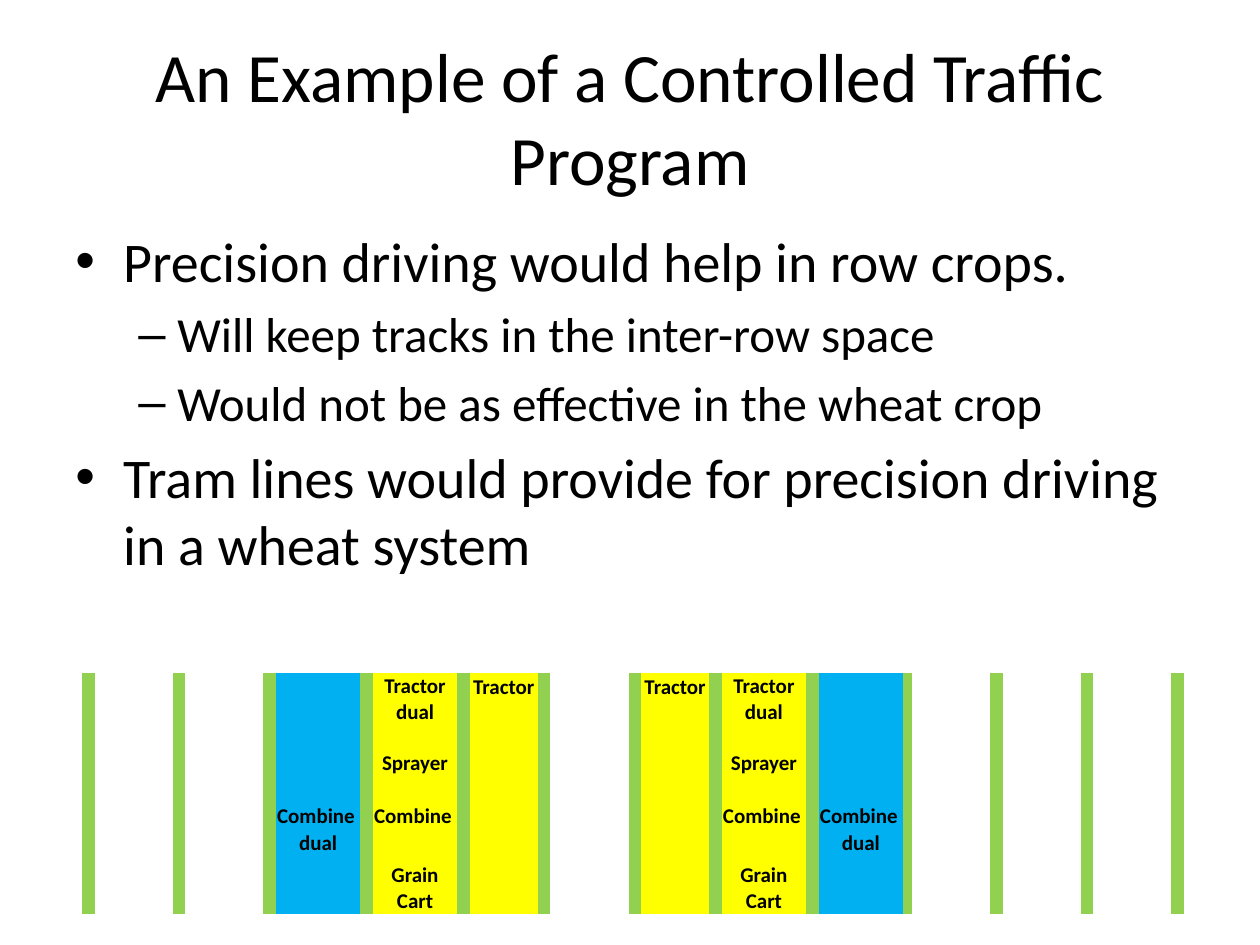
import pptx
import pptx.util
import pptx.dml.color
import pptx.enum.text
import pptx.oxml.ns
import lxml.etree

RGBColor = pptx.dml.color.RGBColor
Align = pptx.enum.text.PP_ALIGN
Anchor = pptx.enum.text.MSO_ANCHOR
Inches = pptx.util.Inches
qn = pptx.oxml.ns.qn

BLACK = RGBColor(0x00, 0x00, 0x00)
TRACK_GREEN = RGBColor(0x92, 0xD0, 0x50)
COMBINE_BLUE = RGBColor(0x00, 0xB0, 0xF0)
LANE_YELLOW = RGBColor(0xFF, 0xFF, 0x00)

FONT = "Calibri"
PLAIN_TABLE_STYLE = "{2D5ABB26-0587-4C30-8999-92F81FD0307C}"
WIDTH, HEIGHT = 10, 7.5
MARGIN = WIDTH * 0.05

BULLETS = [
    (0, "Precision driving would help in row crops."),
    (1, "Will keep tracks in the inter-row space"),
    (1, "Would not be as effective in the wheat crop"),
    (0, "Tram lines would provide for precision driving in a wheat system"),
]
# bullet sign, text size, left indent, hanging indent for each level
LEVELS = [("•", 32, 0.38, 0.38), ("–", 28, 0.81, 0.31)]

TRACK = 0.1
NARROW_TRACK_COLUMN, NARROW_TRACK = 19, 0.07
LANES = [0.28, 0.62, 0.62, 0.67, 0.67, 0.54, 0.62,
         0.54, 0.67, 0.67, 0.62, 0.62, 0.62, 0.28]
ROWS = [0.81, 0.43, 0.67]
# lane numbers on both sides of the centre lane
COMBINE_LANES, SHARED_LANES, TRACTOR_LANES = (3, 9), (4, 8), (5, 7)


def add_text(frame, text, size=12, bold=False, align=Align.LEFT, before=0, bullet=None):
    """Add a paragraph; bullet is (sign, left indent, hanging indent)."""
    para = frame.paragraphs[0]
    if para.runs:
        para = frame.add_paragraph()
    if bullet:
        sign, left, hanging = bullet
        props = para._p.get_or_add_pPr()
        props.set("marL", str(Inches(left)))
        props.set("indent", str(-Inches(hanging)))
        lxml.etree.SubElement(props, qn("a:buFont")).set("typeface", "Arial")
        lxml.etree.SubElement(props, qn("a:buChar")).set("char", sign)
    para.alignment = align
    if before:
        para.space_before = pptx.util.Pt(before)
    span = para.add_run()
    span.text = text
    span.font.name = FONT
    span.font.size = pptx.util.Pt(size)
    span.font.bold = bold
    span.font.color.rgb = BLACK


def add_box(page, left, top, width, height, anchor=Anchor.TOP):
    box = page.shapes.add_textbox(*map(Inches, (left, top, width, height)))
    box.text_frame.word_wrap = True
    box.text_frame.vertical_anchor = anchor
    return box.text_frame


def add_title(page, *area):
    frame = add_box(page, *area, anchor=Anchor.MIDDLE)
    add_text(frame, "An Example of a Controlled Traffic Program",
             size=39.6, align=Align.CENTER)


def add_bullets(page, *area):
    frame = add_box(page, *area)
    for number, (level, text) in enumerate(BULLETS):
        sign, size, left, hanging = LEVELS[level]
        add_text(frame, text, size=size, before=0.2 * size if number else 0,
                 bullet=(sign, left, hanging))


def cell_color(row, column):
    lane = column // 2
    if column % 2:
        # the centre lane lies between two tracks, like every other lane
        return TRACK_GREEN
    if lane in COMBINE_LANES:
        return COMBINE_BLUE
    if lane in SHARED_LANES + TRACTOR_LANES:
        return LANE_YELLOW
    return None


def fill_label(table, row, lane, *lines, align=Align.CENTER, anchor=Anchor.BOTTOM, gap=0):
    cell = table.cell(row, 2 * lane)
    cell.vertical_anchor = anchor
    for number, line in enumerate(lines):
        add_text(cell.text_frame, line, bold=True, align=align,
                 before=gap if number else 0)


def add_traffic_table(page, left, top, width, height):
    columns = 2 * len(LANES) - 1
    table = page.shapes.add_table(
        len(ROWS), columns, *map(Inches, (left, top, width, height))).table
    table.first_row = table.horz_banding = False
    table._tbl.tblPr.find(qn("a:tableStyleId")).text = PLAIN_TABLE_STYLE
    for column in range(columns):
        track = NARROW_TRACK if column == NARROW_TRACK_COLUMN else TRACK
        table.columns[column].width = Inches(track if column % 2 else LANES[column // 2])
    for row, row_height in enumerate(ROWS):
        table.rows[row].height = Inches(row_height)
        for column in range(columns):
            cell = table.cell(row, column)
            cell.margin_left = cell.margin_right = cell.margin_top = Inches(0.01)
            cell.margin_bottom = 0
            color = cell_color(row, column)
            if color is None:
                cell.fill.background()
            else:
                cell.fill.solid()
                cell.fill.fore_color.rgb = color

    for lane in SHARED_LANES:
        fill_label(table, 0, lane, "Tractor dual", "Sprayer", gap=14.6)
        fill_label(table, 2, lane, "Grain Cart")
    for lane in TRACTOR_LANES:
        fill_label(table, 0, lane, "Tractor", anchor=Anchor.TOP)
    for lane in COMBINE_LANES + SHARED_LANES:
        fill_label(table, 1, lane, "Combine", align=Align.LEFT)
    for lane in COMBINE_LANES:
        fill_label(table, 2, lane, "dual", anchor=Anchor.TOP)


def main():
    deck = pptx.Presentation()
    deck.slide_width, deck.slide_height = Inches(WIDTH), Inches(HEIGHT)
    page = deck.slides.add_slide(deck.slide_layouts[6])
    add_title(page, MARGIN, HEIGHT * 0.04, WIDTH - 2 * MARGIN, 1.25)
    add_bullets(page, MARGIN, 1.75, WIDTH - 2 * MARGIN, 4.95)
    add_traffic_table(page, 0.37, 5.34, 9.26, sum(ROWS))
    deck.save("out.pptx")


if __name__ == "__main__":
    main()
